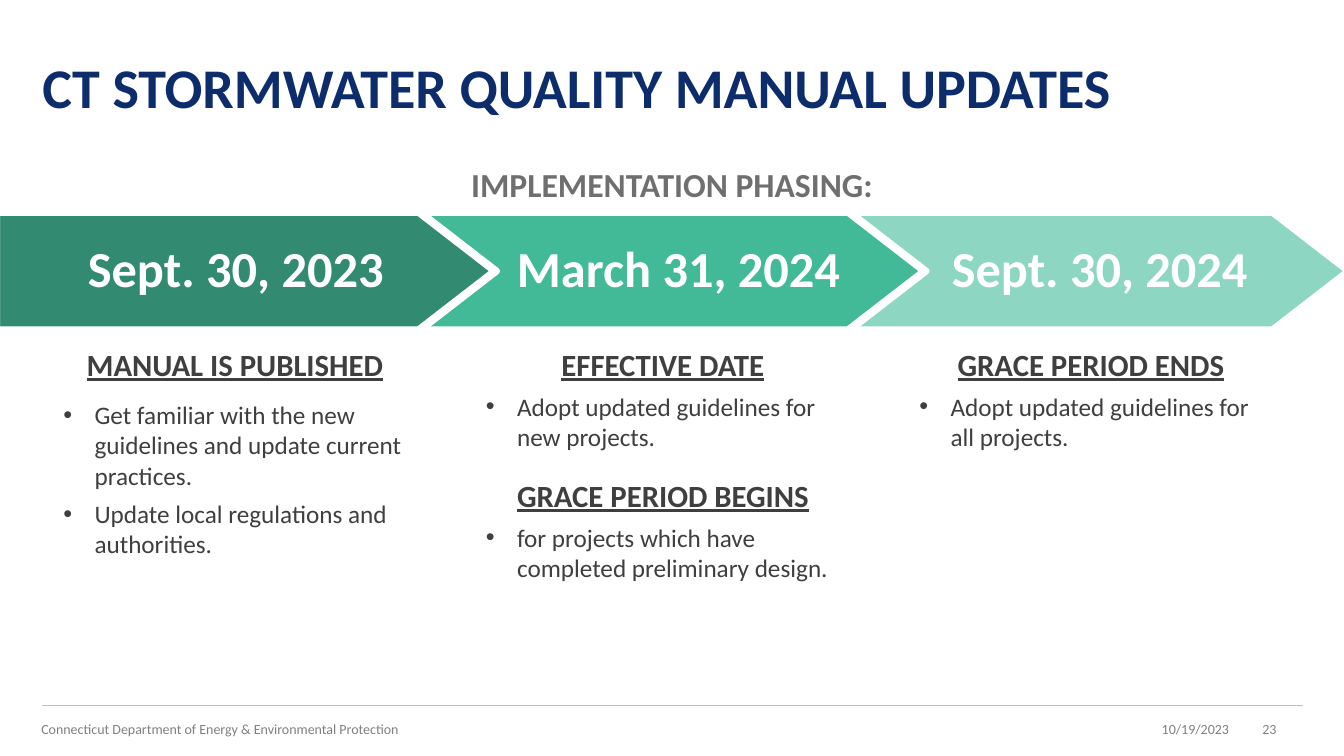
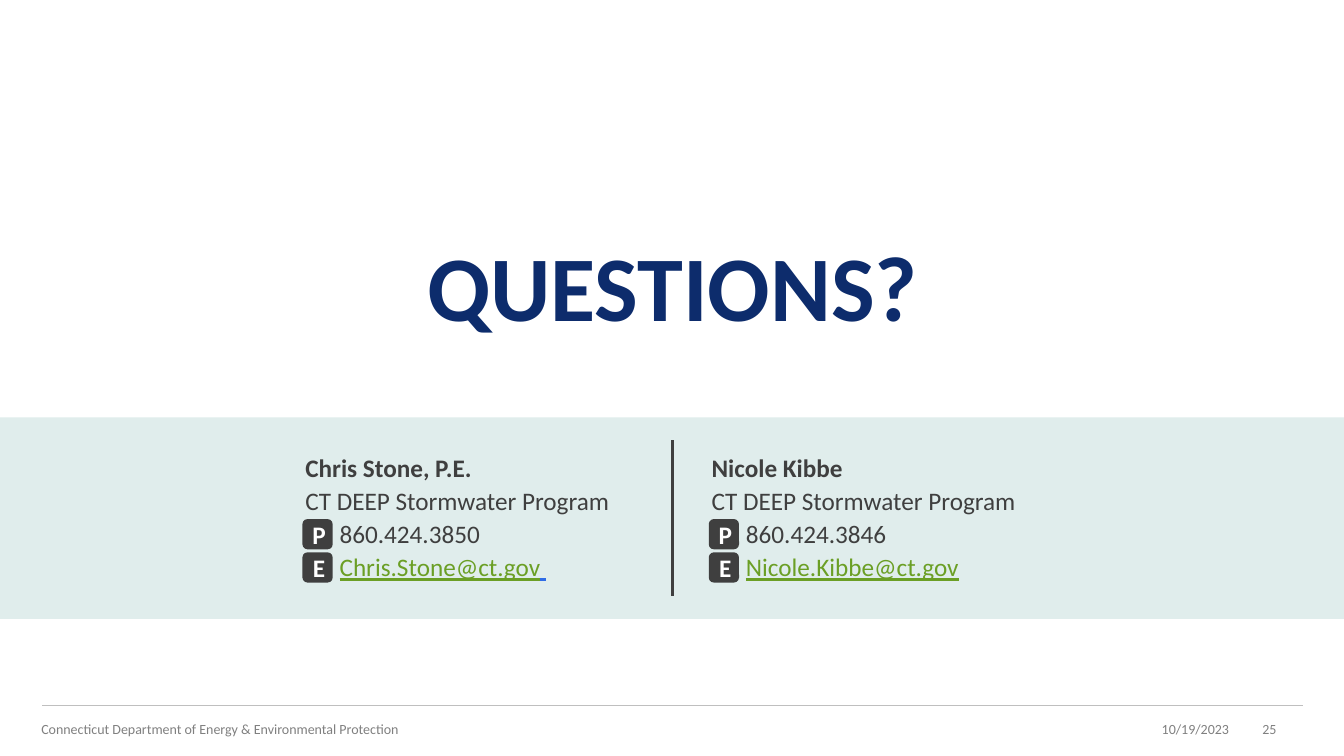
from lxml import etree
from pptx import Presentation
from pptx.dml.color import RGBColor
from pptx.enum.shapes import MSO_CONNECTOR, MSO_SHAPE
from pptx.enum.text import MSO_ANCHOR, MSO_AUTO_SIZE, PP_ALIGN
from pptx.oxml.ns import qn
from pptx.util import Emu, Pt

# Scale: 100 px to the inch
EMU_PER_PX = 9144
SLIDE_WIDTH, SLIDE_HEIGHT = 1333, 750

# Style
FONT = "Calibri"
NAVY = RGBColor(0x0D, 0x2C, 0x6C)
INK = RGBColor(0x3F, 0x3F, 0x3F)
GRAY = RGBColor(0x6F, 0x6F, 0x6F)
FOOTER_GRAY = RGBColor(0x80, 0x80, 0x80)
RULE_GRAY = RGBColor(0xBF, 0xBF, 0xBF)
WHITE = RGBColor(0xFF, 0xFF, 0xFF)
DARK_GREEN = RGBColor(0x32, 0x8B, 0x71)
GREEN = RGBColor(0x42, 0xBA, 0x97)
LIGHT_GREEN = RGBColor(0x8D, 0xD6, 0xC1)
BAND_GREEN = RGBColor(0xE0, 0xED, 0xEC)
LINK_GREEN = RGBColor(0x6B, 0x9F, 0x25)
LINK_BLUE = RGBColor(0x2F, 0x6C, 0xE6)

LEFT, CENTER, RIGHT = PP_ALIGN.LEFT, PP_ALIGN.CENTER, PP_ALIGN.RIGHT
TOP, MIDDLE, BOTTOM = MSO_ANCHOR.TOP, MSO_ANCHOR.MIDDLE, MSO_ANCHOR.BOTTOM
RECTANGLE, ROUNDED = MSO_SHAPE.RECTANGLE, MSO_SHAPE.ROUNDED_RECTANGLE
STRAIGHT = MSO_CONNECTOR.STRAIGHT
NO_AUTOFIT = MSO_AUTO_SIZE.NONE
TITLE_ONLY = 5
NO_INSETS = (0, 0, 0, 0)
TEXT_INSETS = (10, 5, 10, 5)

# Content
AGENCY = "Connecticut Department of Energy & Environmental Protection"
DATE = "10/19/2023"

ARROW_EDGES = (-3, 418, 844, 1265)
ARROW_TOP, ARROW_HEIGHT, ARROW_TIP, ARROW_GAP = 211, 116, 75, 3
HEADING, BULLET = "heading", "bullet"
# date, colour, column left, column width, (kind, text, space before, space after)
PHASES = [
    ("Sept. 30, 2023", DARK_GREEN, 53, 360, [
        (HEADING, "MANUAL IS PUBLISHED", 0, 6),
        (BULLET, "Get familiar with the new guidelines and update current practices.", 6, 0),
        (BULLET, "Update local regulations and authorities.", 6, 0)]),
    ("March 31, 2024", GREEN, 472, 371, [
        (HEADING, "EFFECTIVE DATE", 0, 0),
        (BULLET, "Adopt updated guidelines for new projects.", 6, 0),
        (HEADING, "GRACE PERIOD BEGINS", 18, 0),
        (BULLET, "for projects which have completed preliminary design.", 6, 0)]),
    ("Sept. 30, 2024 ", LIGHT_GREEN, 902, 360, [
        (HEADING, "GRACE PERIOD ENDS", 0, 6),
        (BULLET, "Adopt updated guidelines for all projects.", 0, 0)]),
]

# name, phone, e-mail, underlined text after the e-mail
CONTACTS = [
    ("Chris Stone, P.E.", "860.424.3850", "Chris.Stone@ct.gov", " "),
    ("Nicole Kibbe", "860.424.3846", "Nicole.Kibbe@ct.gov", ""),
]
CONTACT_LEFT, CONTACT_PITCH = 293, 403


def px(length):
    return Emu(length * EMU_PER_PX)


def add_run(paragraph, text, size=18, color=INK, bold=False, underline=False):
    run = paragraph.add_run()
    run.text = text
    font = run.font
    font.name, font.size, font.bold = FONT, Pt(size), bold
    font.underline = underline
    font.color.rgb = color


def write(paragraph, text, align=LEFT, before=0, after=0, spacing=1.0,
          margin=0, bullet=False, **font):
    """Format a paragraph and add its text."""
    paragraph.alignment = align
    paragraph.space_before, paragraph.space_after = Pt(before), Pt(after)
    paragraph.line_spacing = spacing
    if margin:
        properties = paragraph._p.get_or_add_pPr()
        properties.set("marL", str(px(margin)))
        properties.set("indent", str(px(-margin if bullet else 0)))
        if bullet:
            etree.SubElement(properties, qn("a:buFont")).set("typeface", "Arial")
            etree.SubElement(properties, qn("a:buChar")).set("char", "•")
    add_run(paragraph, text, **font)


def prepare(frame, anchor=TOP, insets=TEXT_INSETS):
    """Set up a text frame and return its first paragraph."""
    frame.word_wrap = True
    frame.auto_size = NO_AUTOFIT
    frame.vertical_anchor = anchor
    (frame.margin_left, frame.margin_top,
     frame.margin_right, frame.margin_bottom) = map(px, insets)
    return frame.paragraphs[0]


class Deck:
    def __init__(self):
        self.presentation = Presentation()
        self.presentation.slide_width = px(SLIDE_WIDTH)
        self.presentation.slide_height = px(SLIDE_HEIGHT)
        self.slide = None

    def new_slide(self, number):
        layout = self.presentation.slide_layouts[TITLE_ONLY]
        self.slide = self.presentation.slides.add_slide(layout)
        # Footer
        self.line(42, 700, 1292, 700, RULE_GRAY, 0.75)
        for text, left, width, align in ((AGENCY, 41, 645, LEFT),
                                         (DATE, 983, 236, RIGHT),
                                         (str(number), 1225, 68, CENTER)):
            self.label(text, left, 708, width, 30, align=align,
                       size=10, color=FOOTER_GRAY)

    def title(self, text, top, height, anchor, align, size):
        shape = self.slide.shapes.title
        shape.left, shape.top = px(42), px(top)
        shape.width, shape.height = px(1250), px(height)
        write(prepare(shape.text_frame, anchor, NO_INSETS), text, align=align,
              spacing=0.8, size=size, color=NAVY, bold=True)

    def text_box(self, left, top, width, height):
        return self.slide.shapes.add_textbox(
            px(left), px(top), px(width), px(height)).text_frame

    def label(self, text, left, top, width, height, **style):
        frame = self.text_box(left, top, width, height)
        write(prepare(frame, MIDDLE, NO_INSETS), text, **style)

    def line(self, x1, y1, x2, y2, color, weight):
        connector = self.slide.shapes.add_connector(
            STRAIGHT, px(x1), px(y1), px(x2), px(y2))
        connector.line.color.rgb = color
        connector.line.width = Pt(weight)
        etree.SubElement(connector._element.spPr, qn("a:effectLst"))

    def block(self, preset, left, top, width, height, color):
        shape = self.slide.shapes.add_shape(
            preset, px(left), px(top), px(width), px(height))
        shape.shadow.inherit = False
        shape.fill.solid()
        shape.fill.fore_color.rgb = color
        shape.line.fill.background()
        return shape

    def badge(self, letter, left, top):
        shape = self.block(ROUNDED, left, top, 30, 30, INK)
        write(prepare(shape.text_frame, MIDDLE, (3, 0, 0, 0)), letter,
              align=CENTER, color=WHITE, bold=True)

    def arrow(self, text, left, shoulder, color, notched):
        middle, bottom = ARROW_TOP + ARROW_HEIGHT // 2, ARROW_TOP + ARROW_HEIGHT
        points = [(shoulder, ARROW_TOP), (shoulder + ARROW_TIP, middle),
                  (shoulder, bottom), (left, bottom)]
        if notched:
            points.append((left + ARROW_TIP, middle))
        builder = self.slide.shapes.build_freeform(left, ARROW_TOP, scale=EMU_PER_PX)
        builder.add_line_segments(points, close=True)
        shape = builder.convert_to_shape()
        shape.shadow.inherit = False
        shape.fill.solid()
        shape.fill.fore_color.rgb = color
        shape.line.color.rgb = WHITE
        shape.line.width = Pt(4.5)
        insets = (90, 11, 78, 11) if notched else (23, 11, 42, 11)
        write(prepare(shape.text_frame, MIDDLE, insets), text, align=CENTER,
              spacing=0.9, size=36, color=WHITE, bold=True)

    def phase_notes(self, left, width, notes):
        frame = self.text_box(left, 338, width, 247)
        paragraph = prepare(frame)
        for index, (kind, text, before, after) in enumerate(notes):
            if index:
                paragraph = frame.add_paragraph()
            if kind == HEADING:
                style = dict(align=CENTER, size=22, bold=True, underline=True)
            else:
                style = dict(margin=31, bullet=True)
            write(paragraph, text, before=before, after=after, **style)

    def contact(self, left, name, phone, email, tail):
        frame = self.text_box(left, 444, 344, 140)
        paragraph = prepare(frame)
        lines = ((name, dict(bold=True)),
                 ("CT DEEP Stormwater Program", {}),
                 (phone, dict(margin=34)),
                 (email, dict(margin=34, color=LINK_GREEN, underline=True)))
        for index, (text, style) in enumerate(lines):
            if index:
                paragraph = frame.add_paragraph()
            write(paragraph, text, before=1, after=1, **style)
        if tail:
            add_run(paragraph, tail, color=LINK_BLUE, underline=True)
        for letter, top in (("P", 515), ("E", 548)):
            self.badge(letter, left + 7, top)


def main():
    deck = Deck()

    # Implementation phases, the leftmost arrow in front
    deck.new_slide(23)
    deck.title("CT STORMWATER QUALITY MANUAL UPDATES", 34, 116, MIDDLE, LEFT, 40)
    deck.label("IMPLEMENTATION PHASING:", 41, 155, 1251, 56,
               align=CENTER, size=24, color=GRAY, bold=True)
    for index, phase in reversed(list(enumerate(PHASES))):
        date, color, left, width, notes = phase
        deck.phase_notes(left, width, notes)
        deck.arrow(date, ARROW_EDGES[index], ARROW_EDGES[index + 1] - ARROW_GAP,
                   color, notched=index > 0)

    # Questions and contacts
    deck.new_slide(25)
    deck.block(RECTANGLE, 0, 414, SLIDE_WIDTH, 200, BAND_GREEN)
    deck.title("QUESTIONS?", 226, 111, BOTTOM, CENTER, 66)
    deck.line(667, 437, 667, 591, INK, 2.25)
    for index, contact in enumerate(CONTACTS):
        deck.contact(CONTACT_LEFT + index * CONTACT_PITCH, *contact)

    deck.presentation.save("out.pptx")


if __name__ == "__main__":
    main()
